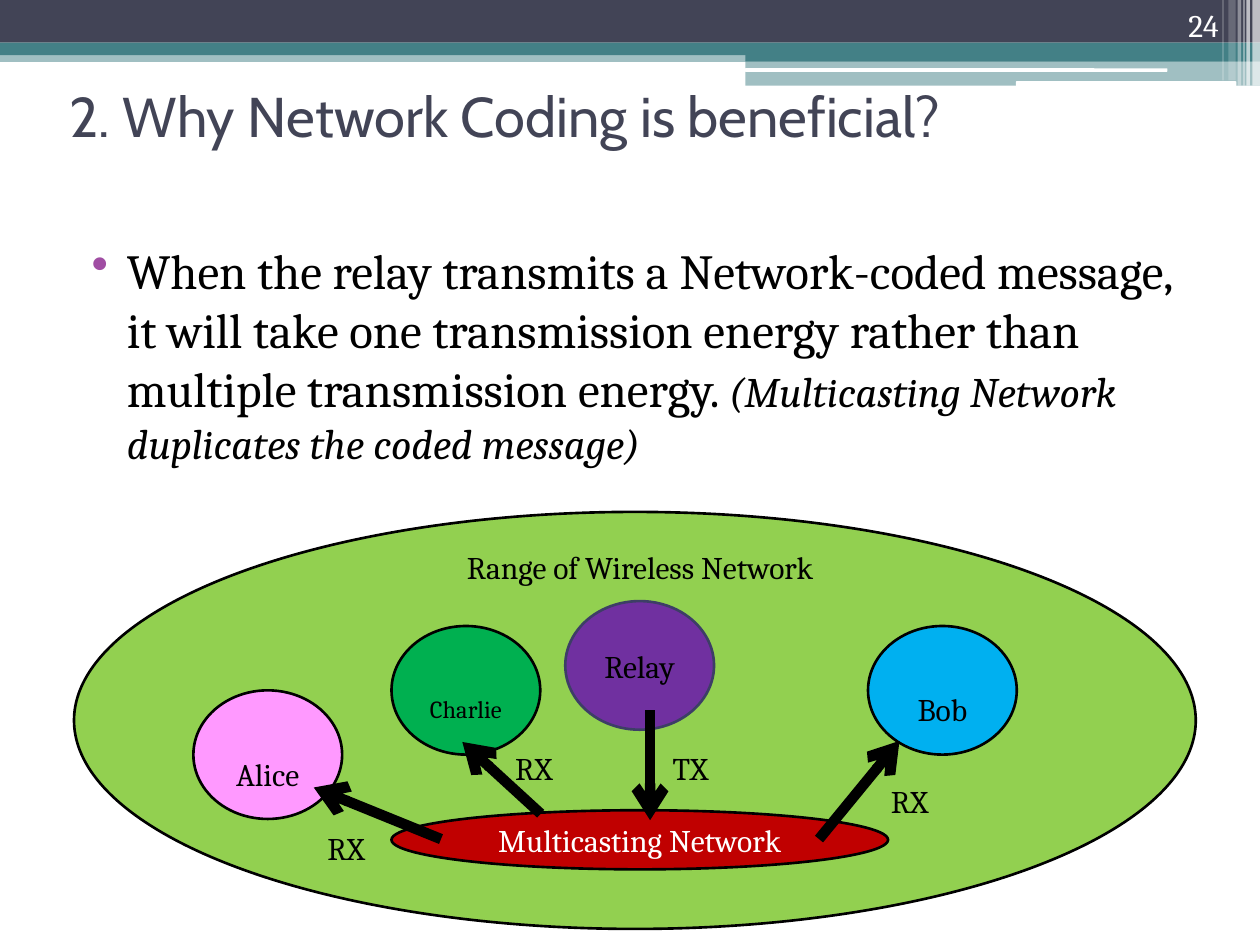
from dataclasses import dataclass
from typing import Optional

from lxml import etree
from pptx import Presentation
from pptx import util as u
from pptx.dml.color import RGBColor
from pptx.enum import shapes, text
from pptx.oxml.ns import qn

COLORS = {
    "white": "FFFFFF", "black": "000000", "navy": "424456", "teal": "438086",
    "bullet": "A04DA3", "range": "92D050", "relay": "7030A0", "relay_edge": "3D3E66",
    "multicast": "C00000", "alice": "FF99FF", "bob": "00B0F0", "charlie": "00B050",
}
SERIF = "Cambria"
NODE_W, NODE_H = 85, 73.5
LOWERED = 25


@dataclass
class Bar:
    left: float
    top: float
    width: float
    height: float
    color: str
    opacity: int = 100
    rounded: bool = False


@dataclass
class Oval:
    left: float
    top: float
    width: float
    height: float
    color: str
    label: str = ""
    size: float = 18
    label_color: str = "black"
    edge: str = "black"
    top_inset: float = 3.6


@dataclass
class Label:
    left: float
    top: float
    width: float
    height: float
    words: str
    size: float = 18
    color: str = "black"
    font: str = SERIF
    align: text.PP_ALIGN = text.PP_ALIGN.LEFT
    anchor: text.MSO_ANCHOR = text.MSO_ANCHOR.TOP
    left_inset: float = 7.2


@dataclass
class Arrow:
    x1: float
    y1: float
    x2: float
    y2: float


BARS = [
    Bar(0, 28.8, 720, 6.6, "teal", 50),
    Bar(0, 0, 720, 24.4, "navy"),
    Bar(0, 24.4, 720, 7.2, "teal"),
    Bar(426, 28, 294, 7, "teal"),
    Bar(426, 34.7, 294, 14.2, "teal", 50),
    Bar(425.7, 39, 241.3, 2, "white", rounded=True),
    Bar(580.5, 46.4, 126, 2.8, "white", rounded=True),
    Bar(715.6, 0, 4.4, 49, "white", 65),
    Bar(712.2, 0, 2, 49, "white", 65),
    Bar(710.5, 0, 0.8, 49, "white", 60),
    Bar(707.2, 0, 2, 49, "white", 40),
    Bar(702, 0, 4.2, 46, "white", 20),
    Bar(698.5, 0, 0.8, 46, "white", 30),
]
OVALS = [
    Oval(42.3, 292.5, 641, 238.3, "range"),
    Oval(323, 343.5, NODE_W, NODE_H, "relay", "Relay", edge="relay_edge"),
    Oval(223.7, 463, 283.8, 33.8, "multicast", "Multicasting Network",
         label_color="white"),
    Oval(110.5, 394.5, NODE_W, NODE_H, "alice", "Alice", top_inset=LOWERED),
    Oval(496, 357.7, NODE_W, NODE_H, "bob", "Bob", top_inset=LOWERED),
    Oval(223.7, 357.7, NODE_W, NODE_H, "charlie", "Charlie", 14, top_inset=LOWERED),
]
LABELS = [
    Label(23.8, 20.9, 662.4, 90, "2. Why Network Coding is beneficial?", 32, "navy",
          "Cabin", anchor=text.MSO_ANCHOR.MIDDLE, left_inset=16),
    Label(643.7, 0, 59.8, 28.8, "24", color="white", align=text.PP_ALIGN.RIGHT,
          anchor=text.MSO_ANCHOR.BOTTOM),
    Label(229.7, 309.6, 272.2, 29, "Range of Wireless Network",
          align=text.PP_ALIGN.CENTER),
    Label(377.3, 424.4, 56.9, 29, "TX"),
    Label(502, 443.5, 56.9, 29, "RX"),
    Label(287.3, 424.4, 56.9, 29, "RX"),
    Label(180, 470, 56.9, 29, "RX"),
]
ARROWS = [
    Arrow(371.5, 406, 371.5, 468.7),
    Arrow(252, 479.5, 179.3, 450),
    Arrow(468, 479.5, 514, 423.4),
    Arrow(309, 465, 264.2, 424),
]


def rgb(name: str) -> RGBColor:
    return RGBColor.from_string(COLORS[name])


def box(item) -> list:
    return [u.Pt(v) for v in (item.left, item.top, item.width, item.height)]


def style(font, size: float, color: str, name: str = SERIF) -> None:
    font.size, font.name = u.Pt(size), name
    font.color.rgb = rgb(color)


def draw_bar(slide, bar: Bar) -> None:
    kind = shapes.MSO_SHAPE.ROUNDED_RECTANGLE if bar.rounded else shapes.MSO_SHAPE.RECTANGLE
    strip = slide.shapes.add_shape(kind, *box(bar))
    strip.shadow.inherit = False
    strip.fill.solid()
    strip.fill.fore_color.rgb = rgb(bar.color)
    strip.line.fill.background()
    if bar.opacity < 100:
        tint = strip.fill._xPr.find(qn("a:solidFill"))[0]
        etree.SubElement(tint, qn("a:alpha"), val=str(bar.opacity * 1000))


def draw_oval(slide, oval: Oval) -> None:
    node = slide.shapes.add_shape(shapes.MSO_SHAPE.OVAL, *box(oval))
    node.shadow.inherit = False
    node.fill.solid()
    node.fill.fore_color.rgb = rgb(oval.color)
    node.line.color.rgb = rgb(oval.edge)
    node.line.width = u.Pt(1.5)
    if oval.label:
        frame = node.text_frame
        frame.margin_top = u.Pt(oval.top_inset)
        frame.vertical_anchor = text.MSO_ANCHOR.MIDDLE
        caption = frame.paragraphs[0]
        caption.text = oval.label
        caption.alignment = text.PP_ALIGN.CENTER
        style(caption.font, oval.size, oval.label_color)


def draw_label(slide, label: Label) -> None:
    frame = slide.shapes.add_textbox(*box(label)).text_frame
    frame.word_wrap = True
    frame.vertical_anchor = label.anchor
    frame.margin_left = u.Pt(label.left_inset)
    line = frame.paragraphs[0]
    line.text = label.words
    line.alignment = label.align
    style(line.font, label.size, label.color, label.font)


def draw_arrow(slide, arrow: Arrow) -> None:
    ends = [u.Pt(v) for v in (arrow.x1, arrow.y1, arrow.x2, arrow.y2)]
    link = slide.shapes.add_connector(shapes.MSO_CONNECTOR.STRAIGHT, *ends)
    link.line.color.rgb = rgb("black")
    link.line.width = u.Pt(6)
    etree.SubElement(link.line._get_or_add_ln(), qn("a:tailEnd"), type="arrow")
    etree.SubElement(link._element.spPr, qn("a:effectLst"))


def draw_message(slide, left: float, top: float, width: float, height: float,
                 statement: str, remark: Optional[str] = None) -> None:
    frame = slide.shapes.add_textbox(*map(u.Pt, (left, top, width, height))).text_frame
    frame.word_wrap = True
    message = frame.paragraphs[0]
    message.space_before = u.Pt(3)
    style(message.font, 28, "black")
    message.add_run().text = statement
    if remark:
        aside = message.add_run()
        aside.text = remark
        aside.font.size, aside.font.italic = u.Pt(24), True
    props = message._p.get_or_add_pPr()
    props.set("marL", str(u.Pt(28.8)))
    props.set("indent", str(u.Pt(-20.2)))
    bullet_color = etree.Element(qn("a:buClr"))
    etree.SubElement(bullet_color, qn("a:srgbClr"), val=COLORS["bullet"])
    bullet = etree.Element(qn("a:buChar"), char="•")
    defaults = props.find(qn("a:defRPr"))
    defaults.addprevious(bullet_color)
    defaults.addprevious(bullet)


def main() -> None:
    deck = Presentation()
    deck.slide_width, deck.slide_height = u.Pt(720), u.Pt(540)
    slide = deck.slides.add_slide(deck.slide_layouts[6])
    for bar in BARS:
        draw_bar(slide, bar)
    draw_message(
        slide, 36.7, 134, 648, 340,
        "When the relay transmits a Network-coded message, it will take one "
        "transmission energy rather than multiple transmission energy. ",
        "(Multicasting Network duplicates the coded message)")
    for oval in OVALS:
        draw_oval(slide, oval)
    for label in LABELS:
        draw_label(slide, label)
    for arrow in ARROWS:
        draw_arrow(slide, arrow)
    deck.save("out.pptx")


if __name__ == "__main__":
    main()
